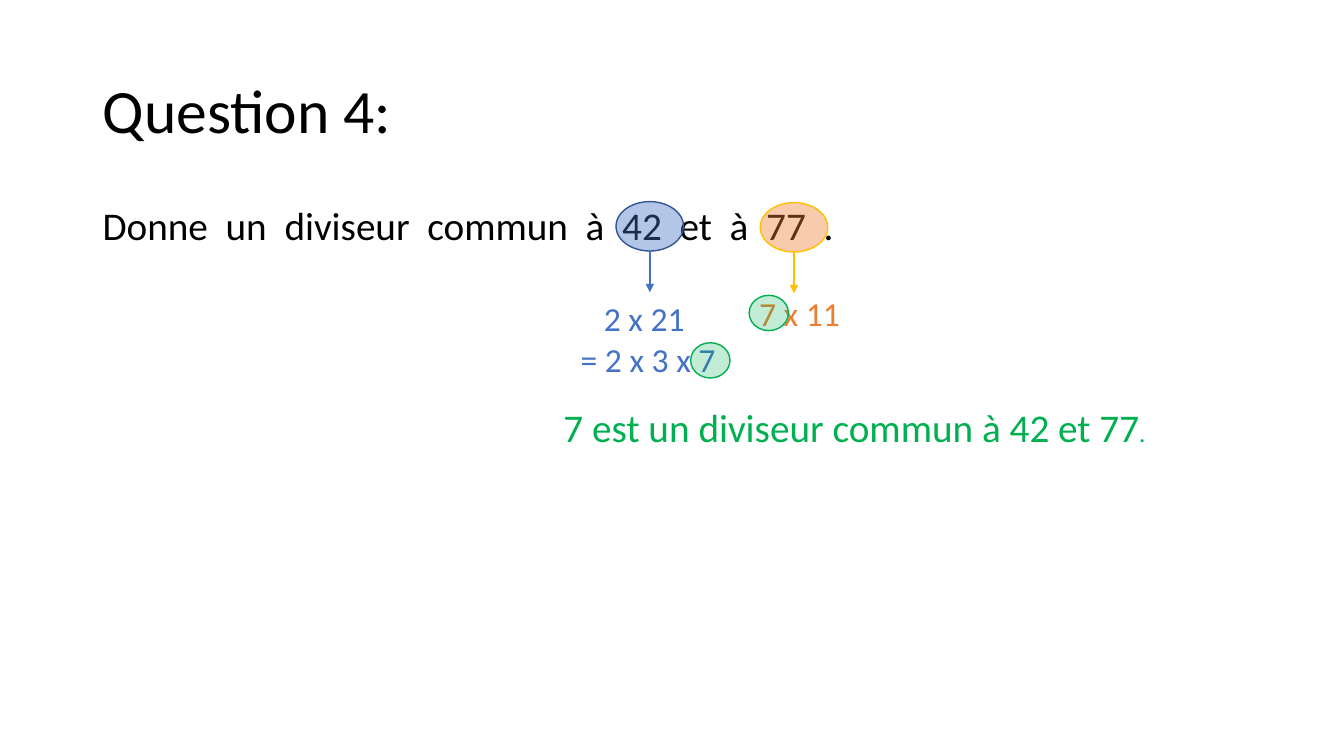
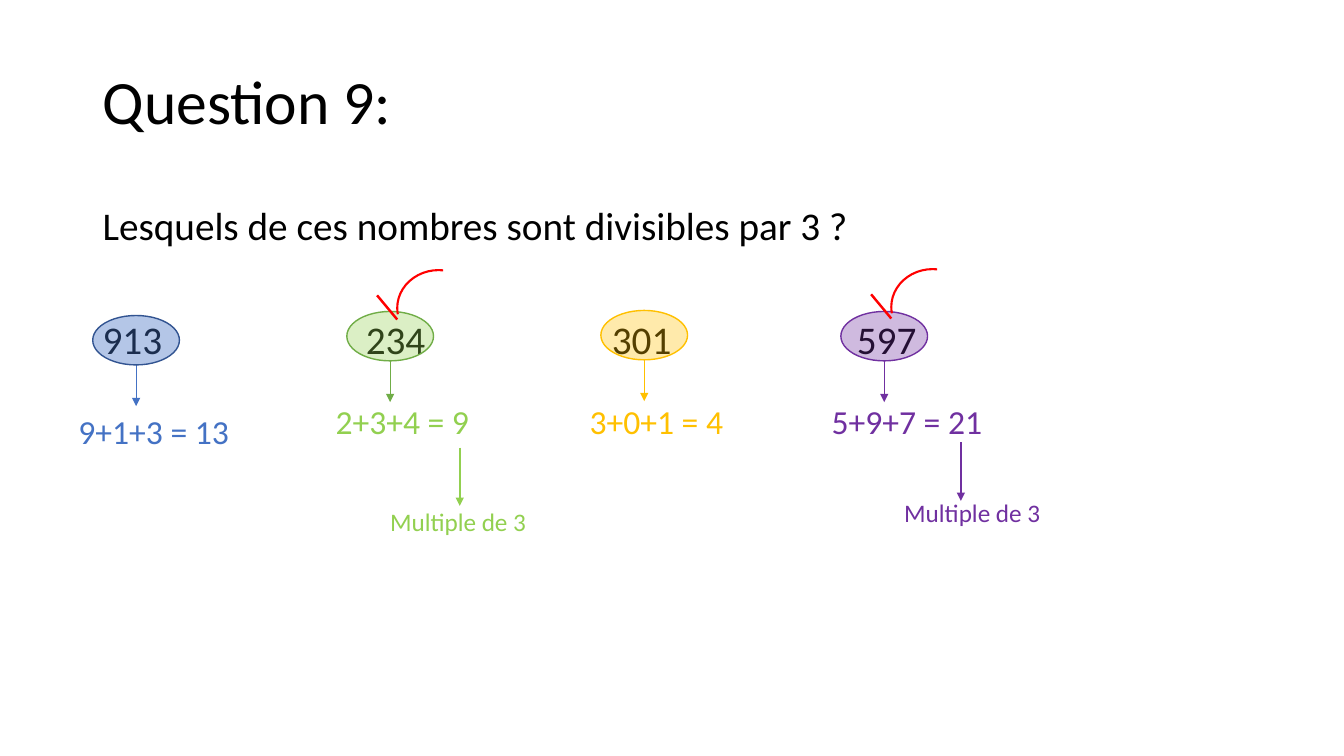
from lxml import etree
from pptx import Presentation
from pptx.dml.color import RGBColor
from pptx.enum.shapes import MSO_CONNECTOR, MSO_SHAPE
from pptx.enum.text import MSO_ANCHOR
from pptx.oxml.ns import qn
from pptx.util import Inches, Pt

STRAIGHT = MSO_CONNECTOR.STRAIGHT
OVAL, ARC = MSO_SHAPE.OVAL, MSO_SHAPE.ARC
TOP, MIDDLE = MSO_ANCHOR.TOP, MSO_ANCHOR.MIDDLE

FONT = "Calibri"
COLOURS = {
    "black": "000000",
    "blue": "4472C4",
    "dark blue": "325491",
    "orange": "ED7D31",
    "gold": "FFC000",
    "green": "00B050",
    "lime": "92D050",
    "leaf": "70AD47",
    "purple": "7030A0",
    "red": "FF0000",
}
MARGIN, CONTENT_WIDTH = 0.92, 11.5
OVAL_HEIGHT = 0.49
ARROW_LENGTH = 0.41


def rgb(name):
    return RGBColor.from_string(COLOURS[name])


# Text
def add_text(page, at, lines, size, colour, wrap=False, anchor=TOP,
             spacing=None, indents=()):
    """Each line is a list of (text, size) pairs or a plain string."""
    box = page.shapes.add_textbox(*map(Inches, at))
    frame = box.text_frame
    for name, value in {"word_wrap": wrap, "vertical_anchor": anchor}.items():
        setattr(frame, name, value)
    for index, line in enumerate(lines):
        para = frame.paragraphs[0] if index == 0 else frame.add_paragraph()
        if spacing:
            para.line_spacing = spacing
        if index < len(indents):
            para._p.get_or_add_pPr().set("marL", str(Inches(indents[index])))
        for text, points in [(line, size)] if isinstance(line, str) else line:
            span = para.add_run()
            span.text = text
            for name, value in {"name": FONT, "size": Pt(points)}.items():
                setattr(span.font, name, value)
            span.font.color.rgb = rgb(colour)


def add_question_page(deck, title, title_top, question):
    page = deck.slides.add_slide(deck.slide_layouts[6])
    add_text(page, (MARGIN, title_top, CONTENT_WIDTH, 1.45), [title], 44,
             "black", wrap=True, anchor=MIDDLE, spacing=0.9)
    add_text(page, (MARGIN, 2, CONTENT_WIDTH, 0.57), [question], 28,
             "black", wrap=True, spacing=0.9)
    return page


# Lines and marks
def add_line(page, start, end, colour, width, arrow=False):
    line = page.shapes.add_connector(STRAIGHT, *map(Inches, (*start, *end)))
    line.line.color.rgb = rgb(colour)
    line.line.width = Pt(width)
    if arrow:
        etree.SubElement(line.line._get_or_add_ln(), qn("a:tailEnd"),
                         type="triangle")
    etree.SubElement(line._element.spPr, qn("a:effectLst"))


def add_oval(page, at, fill, opacity, outline):
    oval = page.shapes.add_shape(OVAL, *map(Inches, at))
    oval.shadow.inherit = False
    oval.fill.solid()
    oval.fill.fore_color.rgb = rgb(fill)
    colour = oval._element.spPr.find(qn("a:solidFill"))[0]
    etree.SubElement(colour, qn("a:alpha"), val=str(opacity * 1000))
    oval.line.color.rgb = rgb(outline)
    oval.line.width = Pt(1)


def add_oval_with_arrow(page, left, top, width, fill, opacity, outline,
                        arrow_colour, arrow_width):
    middle, bottom = left + width / 2, top + OVAL_HEIGHT
    add_line(page, (middle, bottom), (middle, bottom + ARROW_LENGTH),
             arrow_colour, arrow_width, arrow=True)
    add_oval(page, (left, top, width, OVAL_HEIGHT), fill, opacity, outline)


def add_tick(page, left, top):
    add_line(page, (left - 0.2, top + 0.25), (left, top + 0.49), "red", 1.75)
    arc = page.shapes.add_shape(ARC, *map(Inches, (left, top, 0.82, 0.75)))
    arc.shadow.inherit = False
    arc.fill.background()
    arc.line.color.rgb = rgb("red")
    arc.line.width = Pt(1.5)
    for index, angle in enumerate((102.68, 166.11)):
        arc.adjustments[index] = angle


# Slides
def build_common_divisor(deck):
    page = add_question_page(
        deck, "Question 4:", 0.4,
        "Donne  un  diviseur  commun  à  42  et  à  77  .")
    add_text(page, (5.66, 2.91, 1.55, 0.91), ["2 x 21", "= 2 x 3 x 7"], 24,
             "blue", indents=(0.23,))
    add_text(page, (7.43, 2.86, 1.08, 0.5), ["7 x 11"], 24, "orange")
    add_oval_with_arrow(page, 6.11, 2, 0.67, "blue", 40, "dark blue",
                        "blue", 1.25)
    add_oval_with_arrow(page, 7.54, 2.01, 0.67, "orange", 40, "gold",
                        "gold", 1.25)
    for left, top in ((6.85, 3.4), (7.43, 2.93)):
        add_oval(page, (left, top, 0.39, 0.35), "green", 24, "green")
    add_text(page, (5.49, 3.95, 6.05, 0.57),
             [[("7 est un diviseur commun à 42 et 77", 28), (".", 18)]],
             28, "green")


def build_divisible_by_three(deck):
    page = add_question_page(
        deck, "Question 9:", 0.31,
        "Lesquels de ces nombres sont divisibles par 3 ?")

    # number, its left; oval left, top, fill, opacity, outline, arrow;
    # digit sum, its place and width
    candidates = [
        ("913", 0.92, (0.92, 3.13), ("blue", 40, "dark blue", "blue"),
         "9+1+3 = 13", (0.68, 4.03, 1.71)),
        ("234", 3.53, (3.44, 3.09), ("lime", 33, "leaf", "leaf"),
         "2+3+4 = 9", (3.23, 3.93, 1.54)),
        ("301", 5.97, (5.96, 3.08), ("gold", 33, "gold", "gold"),
         "3+0+1 = 4", (5.75, 3.93, 1.54)),
        ("597", 8.4, (8.34, 3.09), ("purple", 33, "purple", "purple"),
         "5+9+7 = 21", (8.15, 3.93, 1.71)),
    ]
    for number, left, corner, style, digit_sum, sum_at in candidates:
        add_text(page, (left, 3.08, 0.79, 0.57), [number], 28, "black")
        add_oval_with_arrow(page, *corner, 0.86, *style, 0.5)
        add_text(page, (*sum_at, 0.5), [digit_sum], 24, style[0])

    # Numbers that pass: arrow, remark and tick
    passing = [
        ("lime", (4.56, 4.44), (3.77, 4.97), (3.94, 2.68)),
        ("purple", (9.53, 4.39), (8.87, 4.88), (8.84, 2.67)),
    ]
    for colour, (x, y), remark_at, tick_at in passing:
        add_line(page, (x, y), (x, y + 0.58), colour, 1.5, arrow=True)
        add_text(page, (*remark_at, 1.57, 0.4), ["Multiple de 3"], 18, colour)
        add_tick(page, *tick_at)


def main():
    deck = Presentation()
    deck.slide_width, deck.slide_height = Inches(13.33), Inches(7.5)
    build_common_divisor(deck)
    build_divisible_by_three(deck)
    deck.save("out.pptx")


if __name__ == "__main__":
    main()
